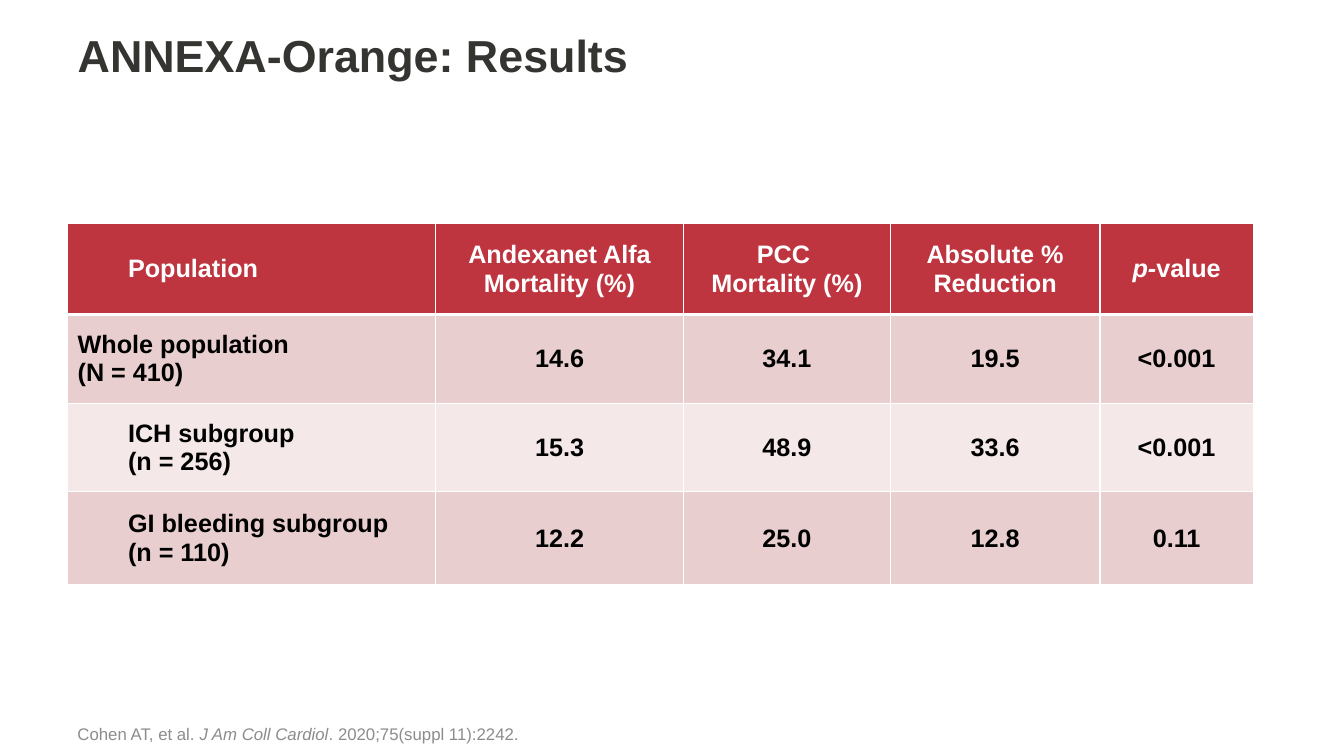
from dataclasses import dataclass

from lxml import etree
from pptx import Presentation
from pptx.dml.color import RGBColor
from pptx.enum.text import MSO_ANCHOR, PP_ALIGN
from pptx.oxml.ns import qn
from pptx.util import Pt

PX = 9144  # EMU per px, 100 px to the inch
LEFT, CENTER = PP_ALIGN.LEFT, PP_ALIGN.CENTER
TOP, MIDDLE, BOTTOM = MSO_ANCHOR.TOP, MSO_ANCHOR.MIDDLE, MSO_ANCHOR.BOTTOM
TITLE_ONLY = 5


@dataclass(frozen=True)
class Theme:
    font: str = "Arial"
    title_size: int = 32
    table_size: int = 18
    source_size: int = 12
    title: str = "343431"
    header: str = "BE3540"
    bands: tuple = ("E8CECF", "F4E8E8")
    white: str = "FFFFFF"
    black: str = "000000"
    source: str = "8C8C8C"


THEME = Theme()
MARGIN, CONTENT_W = 67, 1175
INDENT = 50
COLUMNS = [365, 246, 205, 208, 152]
ROWS = [90, 88, 88, 92]

# \n starts a paragraph, \v breaks a line, *...* is italic
RESULTS = [
    ["Population", "Andexanet Alfa Mortality (%)", "PCC \vMortality (%)",
     "Absolute % Reduction", "*p-*value"],
    ["Whole population\n(N = 410)", "14.6", "34.1", "19.5", "<0.001"],
    ["ICH subgroup\n(n = 256)", "15.3", "48.9", "33.6", "<0.001"],
    ["GI bleeding subgroup\n(n = 110)", "12.2", "25.0", "12.8", "0.11"],
]
WHOLE_POPULATION_ROW = 1


def box(*lengths):
    return [n * PX for n in lengths]


def add_runs(p, text, size, color, bold):
    for i, part in enumerate(text.split("*")):
        for j, line in enumerate(part.split("\v")):
            if j:
                p.add_line_break()
            if line:
                r = p.add_run()
                r.text = line
                fmt = {"name": THEME.font, "size": Pt(size), "bold": bold, "italic": i % 2 == 1}
                for key, value in fmt.items():
                    setattr(r.font, key, value)
                r.font.color.rgb = RGBColor.from_string(color)


def write(tf, text, size, color, bold=False, align=LEFT, indent=0):
    for i, line in enumerate(text.split("\n")):
        p = tf.paragraphs[0] if i == 0 else tf.add_paragraph()
        p.alignment = align
        if indent:
            p.level = 1
            p._p.get_or_add_pPr().set("marL", str(indent * PX))
        add_runs(p, line, size, color, bold)


def add_title(s, text):
    sp = s.shapes.title
    sp.left, sp.top, sp.width, sp.height = box(MARGIN, 22, CONTENT_W, 130)
    sp.text_frame.vertical_anchor = TOP
    write(sp.text_frame, text, THEME.title_size, THEME.title, bold=True)


def set_borders(cell, **widths):
    tc_pr = cell._tc.get_or_add_tcPr()
    for side in "LRTB":
        ln = etree.SubElement(tc_pr, qn(f"a:ln{side}"), w=str(Pt(widths.get(side, 1))))
        fill = etree.SubElement(ln, qn("a:solidFill"))
        etree.SubElement(fill, qn("a:srgbClr"), val=THEME.white)


def format_cell(cell, row, col, text):
    header = row == 0
    # The heavy rule lies between the header and the first body row
    set_borders(cell, **({"B": 3} if header else {"T": 3} if row == 1 else {}))
    cell.fill.solid()
    fill = THEME.header if header else THEME.bands[(row - 1) % 2]
    cell.fill.fore_color.rgb = RGBColor.from_string(fill)
    cell.vertical_anchor = MIDDLE
    indented = col == 0 and row != WHOLE_POPULATION_ROW
    write(cell.text_frame, text, THEME.table_size,
          THEME.white if header else THEME.black, bold=True,
          align=CENTER if col else LEFT, indent=INDENT if indented else 0)


def add_results_table(s, data):
    table = s.shapes.add_table(len(ROWS), len(COLUMNS),
                               *box(MARGIN, 222, sum(COLUMNS), sum(ROWS))).table
    for column, width in zip(table.columns, COLUMNS):
        column.width = width * PX
    for i, (row, height) in enumerate(zip(table.rows, ROWS)):
        row.height = height * PX
        for j, text in enumerate(data[i]):
            format_cell(table.cell(i, j), i, j, text)


def add_source(s, text):
    tf = s.shapes.add_textbox(*box(MARGIN, 695, CONTENT_W, 48)).text_frame
    tf.word_wrap = True
    tf.vertical_anchor = BOTTOM
    write(tf, text, THEME.source_size, THEME.source)


def main():
    prs = Presentation()
    prs.slide_width, prs.slide_height = box(1333, 750)
    s = prs.slides.add_slide(prs.slide_layouts[TITLE_ONLY])
    add_title(s, "ANNEXA-Orange: Results")
    add_results_table(s, RESULTS)
    add_source(s, "Cohen AT, et al. *J Am Coll Cardiol*. 2020;75(suppl 11):2242.")
    prs.save("out.pptx")


if __name__ == "__main__":
    main()
